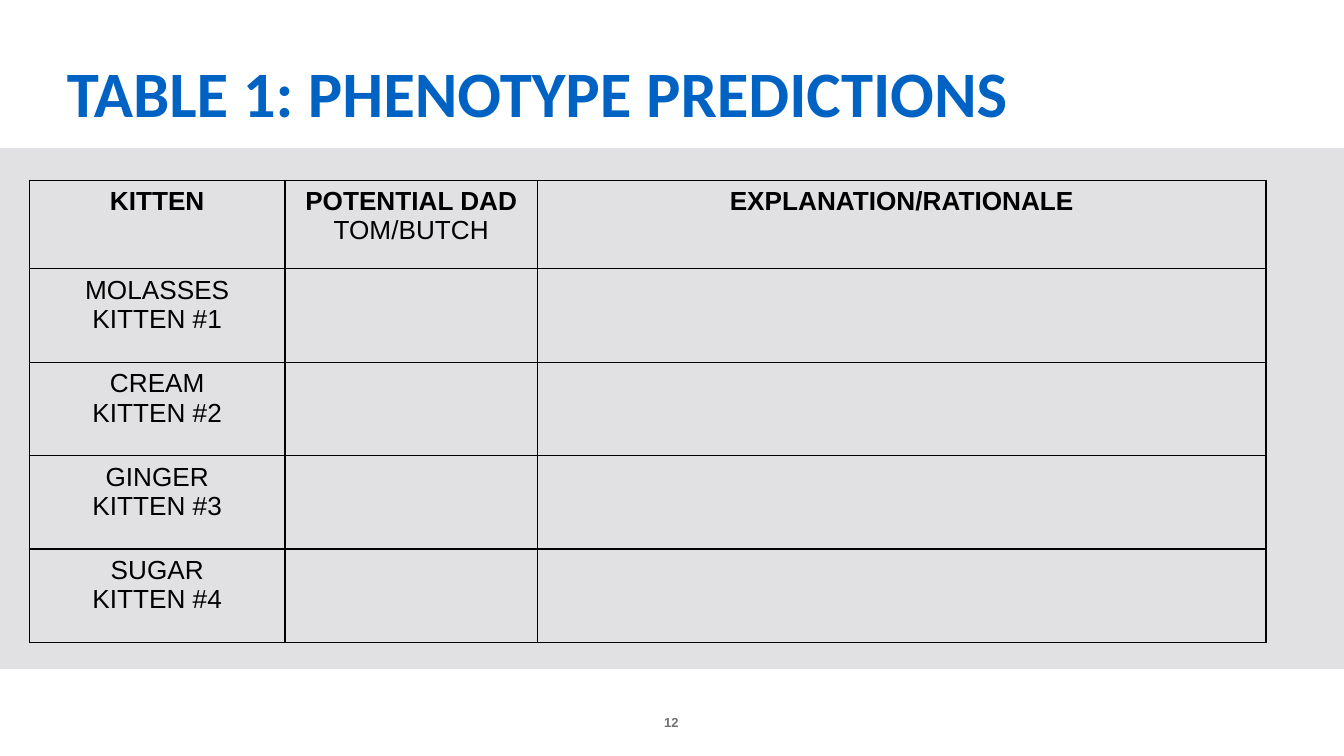
from lxml import etree
from pptx import Presentation
from pptx import util as u
from pptx.dml.color import RGBColor
from pptx.enum import shapes, text
from pptx.oxml.ns import qn

TITLE = "TABLE 1: PHENOTYPE PREDICTIONS"
PAGE_NUMBER = "12"
HEADERS = [["KITTEN"], ["POTENTIAL DAD", "TOM/BUTCH"], ["EXPLANATION/RATIONALE"]]
KITTENS = ["MOLASSES", "CREAM", "GINGER", "SUGAR"]

SLIDE_WIDTH = 10
SLIDE_HEIGHT = SLIDE_WIDTH * 9 / 16
TABLE_BOX = (0.22, 1.34, 9.2, 3.44)
FIRST_WIDTHS = [1.9, 1.88]
HEADER_HEIGHT = 0.66
BLUE, BLACK, GREY, BAND = "0063C3", "000000", "716F73", "E1E1E3"


def color(value):
    return RGBColor.from_string(value)


def write(frame, lines, size, font="Arial", fill=BLACK, bold_lines=0, align=text.PP_ALIGN.CENTER):
    """Put one paragraph per line; the first bold_lines of them are bold."""
    for index, line in enumerate(lines):
        paragraph = frame.paragraphs[0] if index == 0 else frame.add_paragraph()
        paragraph.alignment = align
        run = paragraph.add_run()
        run.text = line
        run.font.size = u.Pt(size)
        run.font.name = font
        run.font.bold = index < bold_lines
        run.font.color.rgb = color(fill)


def add_text(slide, box, line, margins=(0, 0), **style):
    frame = slide.shapes.add_textbox(*map(u.Inches, box)).text_frame
    frame.word_wrap = True
    frame.vertical_anchor = text.MSO_ANCHOR.BOTTOM
    frame.margin_left = frame.margin_right = u.Inches(margins[0])
    frame.margin_top = frame.margin_bottom = u.Inches(margins[1])
    write(frame, [line], bold_lines=1, **style)


def add_borders(cell, width=0.75):
    properties = cell._tc.get_or_add_tcPr()
    for position, side in enumerate(("a:lnL", "a:lnR", "a:lnT", "a:lnB")):
        line = etree.Element(qn(side), w=str(u.Pt(width)))
        fill = etree.SubElement(line, qn("a:solidFill"))
        etree.SubElement(fill, qn("a:srgbClr"), val=BLACK)
        properties.insert(position, line)


def add_predictions(slide):
    rows = [HEADERS] + [
        [[name, f"KITTEN #{number}"], [], []] for number, name in enumerate(KITTENS, 1)
    ]
    table_width, table_height = TABLE_BOX[2:]
    widths = FIRST_WIDTHS + [table_width - sum(FIRST_WIDTHS)]
    row_height = (table_height - HEADER_HEIGHT) / len(KITTENS)
    heights = [HEADER_HEIGHT] + [row_height] * len(KITTENS)
    table = slide.shapes.add_table(len(rows), len(widths), *map(u.Inches, TABLE_BOX)).table
    table.first_row = table.horz_banding = False
    for column, width in zip(table.columns, widths):
        column.width = u.Inches(width)
    for row_index, (lines_by_cell, height) in enumerate(zip(rows, heights)):
        table.rows[row_index].height = u.Inches(height)
        for column_index, lines in enumerate(lines_by_cell):
            cell = table.cell(row_index, column_index)
            cell.fill.background()
            add_borders(cell)
            write(cell.text_frame, lines, 14, bold_lines=1 if row_index == 0 else 0)


def main():
    presentation = Presentation()
    presentation.slide_width = u.Inches(SLIDE_WIDTH)
    presentation.slide_height = u.Inches(SLIDE_HEIGHT)
    slide = presentation.slides.add_slide(presentation.slide_layouts[6])

    add_text(slide, (4.54, 5.13, 0.91, 0.3), PAGE_NUMBER, size=7, fill=GREY)
    band = slide.shapes.add_shape(
        shapes.MSO_SHAPE.RECTANGLE, *map(u.Inches, (0, 1.1, SLIDE_WIDTH, 3.88))
    )
    band.shadow.inherit = False
    band.fill.solid()
    band.fill.fore_color.rgb = color(BAND)
    band.line.fill.background()
    add_text(slide, (0.4, 0.34, 9.2, 0.68), TITLE, margins=(0.1, 0.05), size=34.7,
             font="Calibri", fill=BLUE, align=text.PP_ALIGN.LEFT)
    add_predictions(slide)
    presentation.save("out.pptx")


if __name__ == "__main__":
    main()
